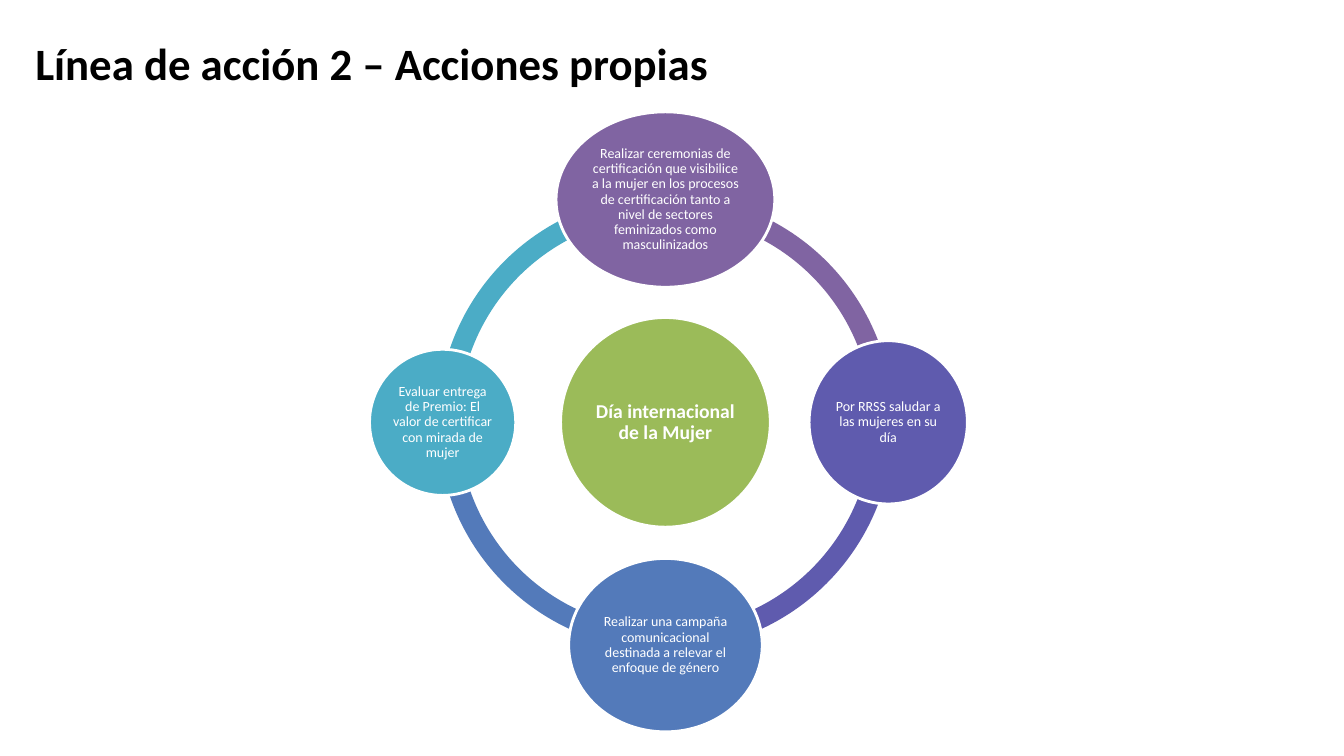
"""Builds the slide on the actions for International Women's Day."""
from dataclasses import dataclass

from pptx import Presentation
from pptx.dml.color import RGBColor
from pptx.enum.shapes import MSO_SHAPE
from pptx.enum.text import MSO_ANCHOR, MSO_AUTO_SIZE, PP_ALIGN
from pptx.util import Inches, Pt

ELLIPSE, BLOCK_ARC = MSO_SHAPE.OVAL, MSO_SHAPE.BLOCK_ARC
CENTER, MIDDLE = PP_ALIGN.CENTER, MSO_ANCHOR.MIDDLE
NO_AUTOFIT = MSO_AUTO_SIZE.NONE

TITLE = "Línea de acción 2 – Acciones propias"
HUB_TEXT = "Día internacional de la Mujer"
# text, colour, width, height; clockwise from the top
ACTIONS = [
    ("Realizar ceremonias de certificación que visibilice a la mujer en los procesos de "
     "certificación tanto a nivel de sectores feminizados como masculinizados",
     "8064A2", 2.17, 1.74),
    ("Por RRSS saludar a las mujeres en su día", "5F5BAE", 1.57, 1.62),
    ("Realizar una campaña comunicacional destinada a relevar el enfoque de género",
     "537ABA", 1.92, 1.72),
    ("Evaluar entrega de Premio: El valor de certificar con mirada de mujer",
     "4BACC6", 1.45, 1.45),
]
DIRECTIONS = [(0, -1), (1, 0), (0, 1), (-1, 0)]
CENTER_X, CENTER_Y = 6.6, 4.19
ORBIT_RADIUS = 2.21
RING_SIZE, RING_THICKNESS = 4.52, 0.046
HUB_SIZE = 2.08
QUARTER_TURN, FULL_TURN = 54, 216


@dataclass(frozen=True)
class Theme:
    font: str = "Calibri"
    title_size: int = 32
    hub_size: int = 14
    action_size: int = 10
    outline_width: int = 2
    hub: str = "9BBB59"
    light: str = "FFFFFF"
    dark: str = "000000"


THEME = Theme()


def write(shape, text, size, color, bold=False):
    frame = shape.text_frame
    frame.word_wrap = True
    frame.auto_size = NO_AUTOFIT
    frame.vertical_anchor = MIDDLE
    para = frame.paragraphs[0]
    para.text = text
    para.alignment = CENTER
    para.font.name = THEME.font
    para.font.size = Pt(size)
    para.font.bold = bold
    para.font.color.rgb = RGBColor.from_string(color)
    return frame


def add_centered(slide, kind, x, y, width, height, color):
    shape = slide.shapes.add_shape(kind, Inches(x - width / 2), Inches(y - height / 2),
                                   Inches(width), Inches(height))
    shape.shadow.inherit = False
    shape.fill.solid()
    shape.fill.fore_color.rgb = RGBColor.from_string(color)
    shape.line.fill.background()
    return shape


def add_arc(slide, position, color):
    arc = add_centered(slide, BLOCK_ARC, CENTER_X, CENTER_Y, RING_SIZE, RING_SIZE, color)
    start = (position + 3) * QUARTER_TURN % FULL_TURN
    arc.adjustments[0] = start
    arc.adjustments[1] = (start + QUARTER_TURN) % FULL_TURN
    arc.adjustments[2] = RING_THICKNESS


def add_circle(slide, x, y, width, height, color, text, size, bold=False):
    circle = add_centered(slide, ELLIPSE, x, y, width, height, color)
    circle.line.color.rgb = RGBColor.from_string(THEME.light)
    circle.line.width = Pt(THEME.outline_width)
    frame = write(circle, text, size, THEME.light, bold)
    frame.margin_left = frame.margin_right = Inches(0.01)
    frame.margin_top = frame.margin_bottom = Inches(0.01)
    frame.paragraphs[0].line_spacing = 0.9


def main():
    deck = Presentation()
    deck.slide_width, deck.slide_height = Inches(13.33), Inches(7.5)
    slide = deck.slides.add_slide(deck.slide_layouts[5])

    title = slide.shapes.title
    title.left, title.top = Inches(-2.31), Inches(0)
    title.width, title.height = Inches(12), Inches(1.25)
    write(title, TITLE, THEME.title_size, THEME.dark, bold=True)

    for position, (_, color, _, _) in enumerate(ACTIONS):
        add_arc(slide, position, color)
    add_circle(slide, CENTER_X, CENTER_Y, HUB_SIZE, HUB_SIZE, THEME.hub,
               HUB_TEXT, THEME.hub_size, bold=True)
    for (text, color, width, height), (step_x, step_y) in zip(ACTIONS, DIRECTIONS):
        add_circle(slide, CENTER_X + step_x * ORBIT_RADIUS, CENTER_Y + step_y * ORBIT_RADIUS,
                   width, height, color, text, THEME.action_size)

    deck.save("out.pptx")


if __name__ == "__main__":
    main()
